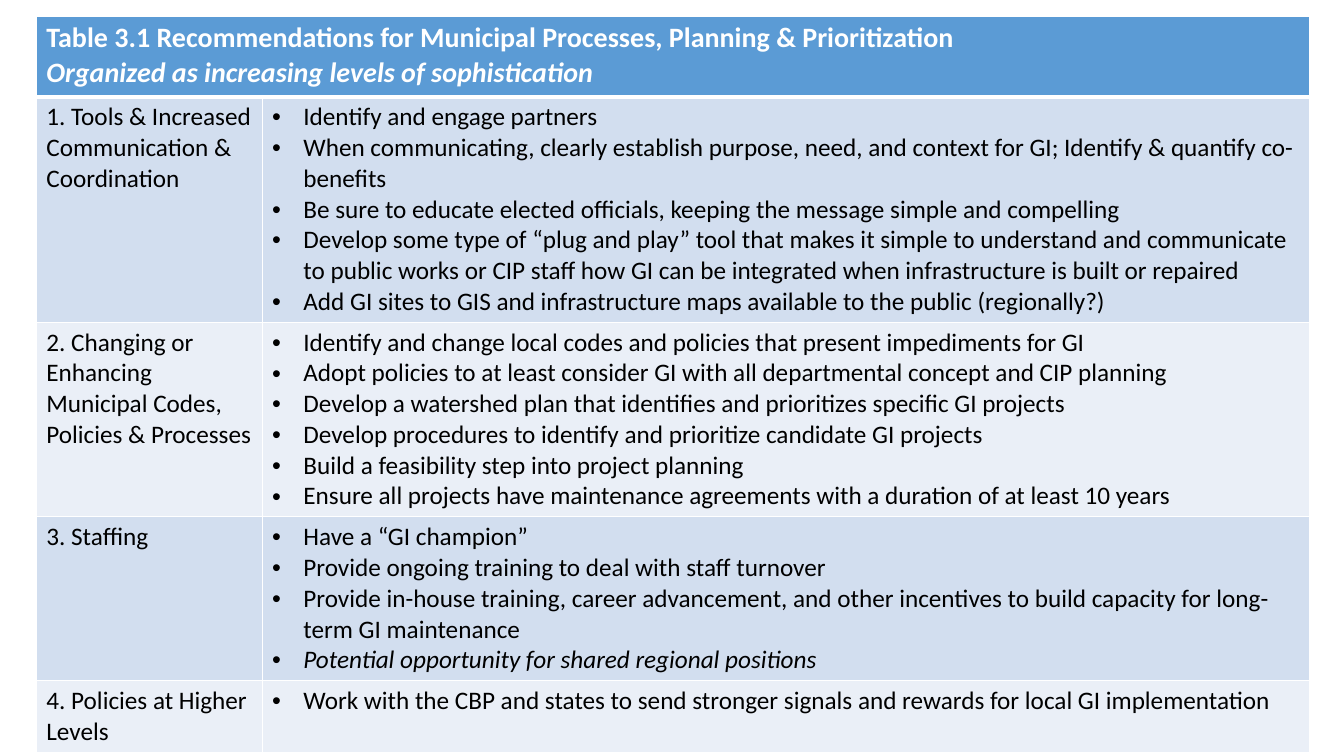
from dataclasses import dataclass

from lxml import etree
from pptx import Presentation
from pptx.dml.color import RGBColor
from pptx.oxml.ns import qn
from pptx.util import Inches, Pt

SLIDE_WIDTH, SLIDE_HEIGHT = 13.33, 7.5
TABLE_BOX = (0.36, 0.16, 12.63, 7.2)
LABEL_WIDTH = 2.24
HEADER_HEIGHT = 0.8
BULLET_INDENT = 0.31


@dataclass(frozen=True)
class Theme:
    font: str = "Calibri"
    title_size: int = 20
    body_size: int = 18
    header_fill: str = "5B9BD5"
    bands: tuple = ("D2DEEF", "EAEFF7")
    header_text: str = "FFFFFF"
    body_text: str = "000000"
    border: str = "FFFFFF"
    thin: int = 1
    thick: int = 3


THEME = Theme()

TITLE = "Table 3.1 Recommendations for Municipal Processes, Planning & Prioritization"
SUBTITLE = "Organized as increasing levels of sophistication"
SHARED_POSITIONS = "Potential opportunity for shared regional positions"

# Each level: row height, label, recommendations
LEVELS = [
    (1.93, "1. Tools & Increased Communication & Coordination", [
        "Identify and engage partners",
        "When communicating, clearly establish purpose, need, and context for GI; "
        "Identify & quantify co-benefits",
        "Be sure to educate elected officials, keeping the message simple and compelling",
        "Develop some type of “plug and play” tool that makes it simple to understand and "
        "communicate to public works or CIP staff how GI can be integrated when "
        "infrastructure is built or repaired",
        "Add GI sites to GIS and infrastructure maps available to the public (regionally?)",
    ]),
    (1.67, "2. Changing or Enhancing Municipal Codes, Policies & Processes", [
        "Identify and change local codes and policies that present impediments for GI",
        "Adopt policies to at least consider GI with all departmental concept and CIP planning",
        "Develop a watershed plan that identifies and prioritizes specific GI projects",
        "Develop procedures to identify and prioritize candidate GI projects",
        "Build a feasibility step into project planning",
        "Ensure all projects have maintenance agreements with a duration of at least 10 years",
    ]),
    (1.41, "3. Staffing", [
        "Have a “GI champion”",
        "Provide ongoing training to deal with staff turnover",
        "Provide in-house training, career advancement, and other incentives to build "
        "capacity for long-term GI maintenance",
        SHARED_POSITIONS,
    ]),
    (0.67, "4. Policies at Higher Levels", [
        "Work with the CBP and states to send stronger signals and rewards for local GI "
        "implementation",
    ]),
]


def set_borders(cell, bottom=THEME.thin, top=THEME.thin):
    properties = cell._tc.get_or_add_tcPr()
    widths = {"L": THEME.thin, "R": THEME.thin, "T": top, "B": bottom}
    for position, (side, width) in enumerate(widths.items()):
        line = etree.Element(qn(f"a:ln{side}"), w=str(Pt(width)))
        fill = etree.SubElement(line, qn("a:solidFill"))
        etree.SubElement(fill, qn("a:srgbClr"), val=THEME.border)
        properties.insert(position, line)


def fill_cell(cell, color):
    cell.fill.solid()
    cell.fill.fore_color.rgb = RGBColor.from_string(color)


def write_lines(cell, lines, size, color, bold=False, italic_lines=()):
    cell.text_frame.text = "\n".join(lines)
    for paragraph in cell.text_frame.paragraphs:
        font = paragraph.font
        font.name, font.size, font.bold = THEME.font, Pt(size), bold
        font.italic = paragraph.text in italic_lines
        font.color.rgb = RGBColor.from_string(color)


def add_bullets(cell):
    indent = Inches(BULLET_INDENT)
    for paragraph in cell.text_frame.paragraphs:
        properties = paragraph._p.get_or_add_pPr()
        properties.set("marL", str(indent))
        properties.set("indent", str(-indent))
        bullet_font = etree.Element(qn("a:buFont"), typeface="Arial")
        bullet = etree.Element(qn("a:buChar"), char="•")
        properties.insert(0, bullet_font)
        properties.insert(1, bullet)


def fill_header(table):
    header = table.cell(0, 0)
    header.merge(table.cell(0, 1))
    write_lines(header, [TITLE, SUBTITLE], THEME.title_size, THEME.header_text,
                bold=True, italic_lines=(SUBTITLE,))
    for cell in table.rows[0].cells:
        fill_cell(cell, THEME.header_fill)
        set_borders(cell, bottom=THEME.thick)


def fill_level(table, row, label, recommendations):
    label_cell, list_cell = table.rows[row].cells
    write_lines(label_cell, [label], THEME.body_size, THEME.body_text)
    write_lines(list_cell, recommendations, THEME.body_size, THEME.body_text,
                italic_lines=(SHARED_POSITIONS,))
    add_bullets(list_cell)
    for cell in (label_cell, list_cell):
        fill_cell(cell, THEME.bands[(row - 1) % 2])
        set_borders(cell, top=THEME.thick if row == 1 else THEME.thin)


def add_recommendations_table(slide, box):
    left, top, width, height = map(Inches, box)
    table = slide.shapes.add_table(len(LEVELS) + 1, 2, left, top, width, height).table
    table.columns[0].width = Inches(LABEL_WIDTH)
    table.columns[1].width = width - Inches(LABEL_WIDTH)
    table.rows[0].height = Inches(HEADER_HEIGHT)
    fill_header(table)
    for row, (row_height, label, recommendations) in enumerate(LEVELS, start=1):
        table.rows[row].height = Inches(row_height)
        fill_level(table, row, label, recommendations)


def main():
    presentation = Presentation()
    presentation.slide_width = Inches(SLIDE_WIDTH)
    presentation.slide_height = Inches(SLIDE_HEIGHT)
    slide = presentation.slides.add_slide(presentation.slide_layouts[6])
    add_recommendations_table(slide, TABLE_BOX)
    presentation.save("out.pptx")


if __name__ == "__main__":
    main()
